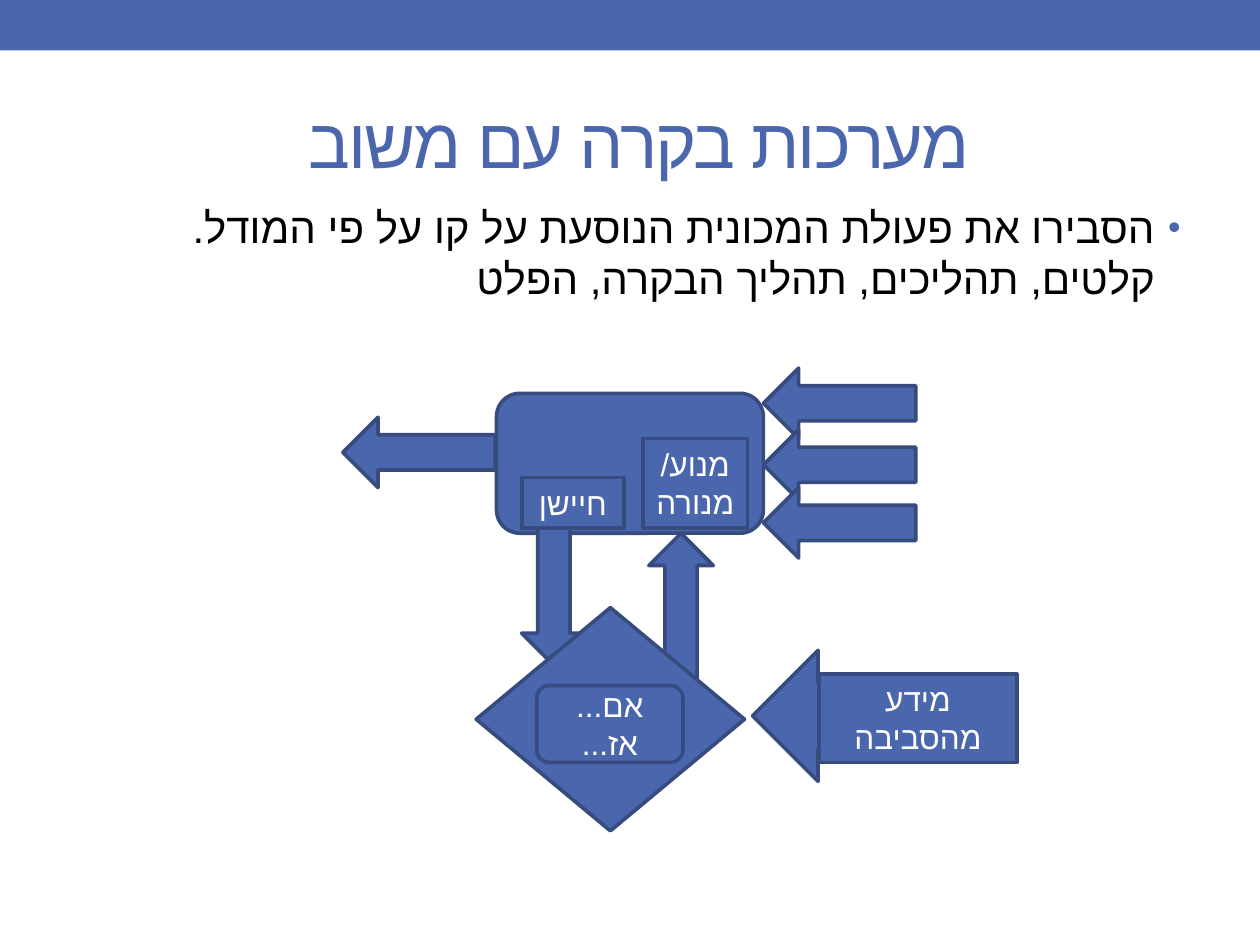
from dataclasses import dataclass

import pptx
import pptx.dml.color
import pptx.enum.shapes
import pptx.enum.text
import pptx.oxml
import pptx.oxml.ns
import pptx.util
from lxml import etree

Cm = pptx.util.Cm
SHAPE = pptx.enum.shapes.MSO_SHAPE
ALIGN = pptx.enum.text.PP_ALIGN
ANCHOR = pptx.enum.text.MSO_ANCHOR


@dataclass(frozen=True)
class Theme:
    """Colours, font and sizes shared by the whole slide."""
    blue: str = "4A66AC"
    outline: str = "374B7F"
    black: str = "000000"
    white: str = "FFFFFF"
    font: str = "Arial"
    title: int = 40
    body: int = 24
    label: int = 18
    line: float = 2.08


THEME = Theme()


def rgb(value):
    """Return the colour object for a hex value."""
    return pptx.dml.color.RGBColor.from_string(value)


def write(frame, text, size, color, align, anchor):
    """Write one right-to-left paragraph and return it."""
    frame.word_wrap = True
    frame.vertical_anchor = anchor
    paragraph = frame.paragraphs[0]
    paragraph.text = text
    paragraph.alignment = align
    paragraph._p.get_or_add_pPr().set("rtl", "1")
    font = paragraph.font
    font.size = pptx.util.Pt(size)
    font.name = THEME.font
    font.color.rgb = rgb(color)
    script = etree.SubElement(font._element, pptx.oxml.ns.qn("a:cs"))
    script.set("typeface", THEME.font)
    return paragraph


def add_block(slide, kind, box, text=None, rotation=0, outlined=True):
    """Draw a blue shape, optionally turned, outlined and labelled."""
    block = slide.shapes.add_shape(kind, *(Cm(length) for length in box))
    block.shadow.inherit = False
    block.rotation = rotation
    block.fill.solid()
    block.fill.fore_color.rgb = rgb(THEME.blue)
    if outlined:
        block.line.color.rgb = rgb(THEME.outline)
        block.line.width = pptx.util.Pt(THEME.line)
    else:
        block.line.fill.background()
    if text:
        write(block.text_frame, text, THEME.label, THEME.white, ALIGN.CENTER, ANCHOR.MIDDLE)
    return block


def add_title(slide, box):
    """Place the slide title."""
    title = slide.shapes.add_textbox(*(Cm(length) for length in box))
    paragraph = write(title.text_frame, "מערכות בקרה עם משוב ", THEME.title,
                      THEME.blue, ALIGN.CENTER, ANCHOR.MIDDLE)
    paragraph.font._element.set("spc", "-100")


def add_task(slide, box):
    """Place the bulleted task with its hanging indent."""
    task = slide.shapes.add_textbox(*(Cm(length) for length in box))
    frame = task.text_frame
    properties = frame.paragraphs[0]._p.get_or_add_pPr()
    properties.set("marL", str(Cm(0.51)))
    properties.set("indent", str(Cm(-0.51)))
    namespace = pptx.oxml.ns.nsdecls("a")
    for bullet in (
        f'<a:buClr {namespace}><a:srgbClr val="{THEME.blue}"/></a:buClr>',
        f'<a:buSzPct {namespace} val="85000"/>',
        f'<a:buFont {namespace} typeface="{THEME.font}"/>',
        f'<a:buChar {namespace} char="•"/>',
    ):
        properties.append(pptx.oxml.parse_xml(bullet))
    write(frame, "הסבירו את פעולת המכונית הנוסעת על קו על פי המודל.\v"
          "קלטים, תהליכים, תהליך הבקרה, הפלט",
          THEME.body, THEME.black, ALIGN.RIGHT, ANCHOR.TOP)


def add_feedback_model(slide, box):
    """Draw the control loop with its inputs, output and feedback."""
    left, top, _, _ = box

    def place(kind, x, y, width, height, text=None, rotation=0):
        add_block(slide, kind, (left + x, top + y, width, height), text, rotation)

    arrow = SHAPE.RIGHT_ARROW
    flow_size = (3.07, 1.42)
    place(SHAPE.ROUNDED_RECTANGLE, 3.1, 0.51, 5.38, 2.82)
    for x, y in ((8.48, 0), (8.48, 1.24), (8.48, 2.41), (0, 0.99)):
        place(arrow, x, y, *flow_size, rotation=180)
    place(arrow, 2.87, 3.96, 2.77, 1.3, rotation=90)
    place(arrow, 5.31, 4.19, 3.02, 1.3, rotation=270)
    place(SHAPE.FLOWCHART_DECISION, 2.69, 4.83, 5.41, 4.5)
    place(arrow, 8.26, 5.69, 5.28, 2.64, rotation=180)
    place(SHAPE.RECTANGLE, 3.61, 2.21, 2.06, 1.02, "חיישן")
    place(SHAPE.RECTANGLE, 6.05, 1.42, 2.11, 1.8, "מנוע/מנורה")
    place(SHAPE.ROUNDED_RECTANGLE, 3.91, 6.4, 2.95, 1.55, "אם... אז...")
    place(SHAPE.RECTANGLE, 9.6, 6.17, 3.99, 1.78, "מידע מהסביבה")


def main():
    """Build and save the slide."""
    deck = pptx.Presentation()
    deck.slide_width, deck.slide_height = Cm(25.4), Cm(19.05)
    slide = deck.slides.add_slide(deck.slide_layouts[6])
    add_block(slide, SHAPE.RECTANGLE, (0, 0, 25.4, 1.02), outlined=False)
    add_task(slide, (1.19, 3.94, 22.86, 3.48))
    add_title(slide, (1.27, 1.47, 22.86, 2.74))
    add_feedback_model(slide, (6.91, 7.42, 13.59, 9.33))
    deck.save("out.pptx")


if __name__ == "__main__":
    main()
